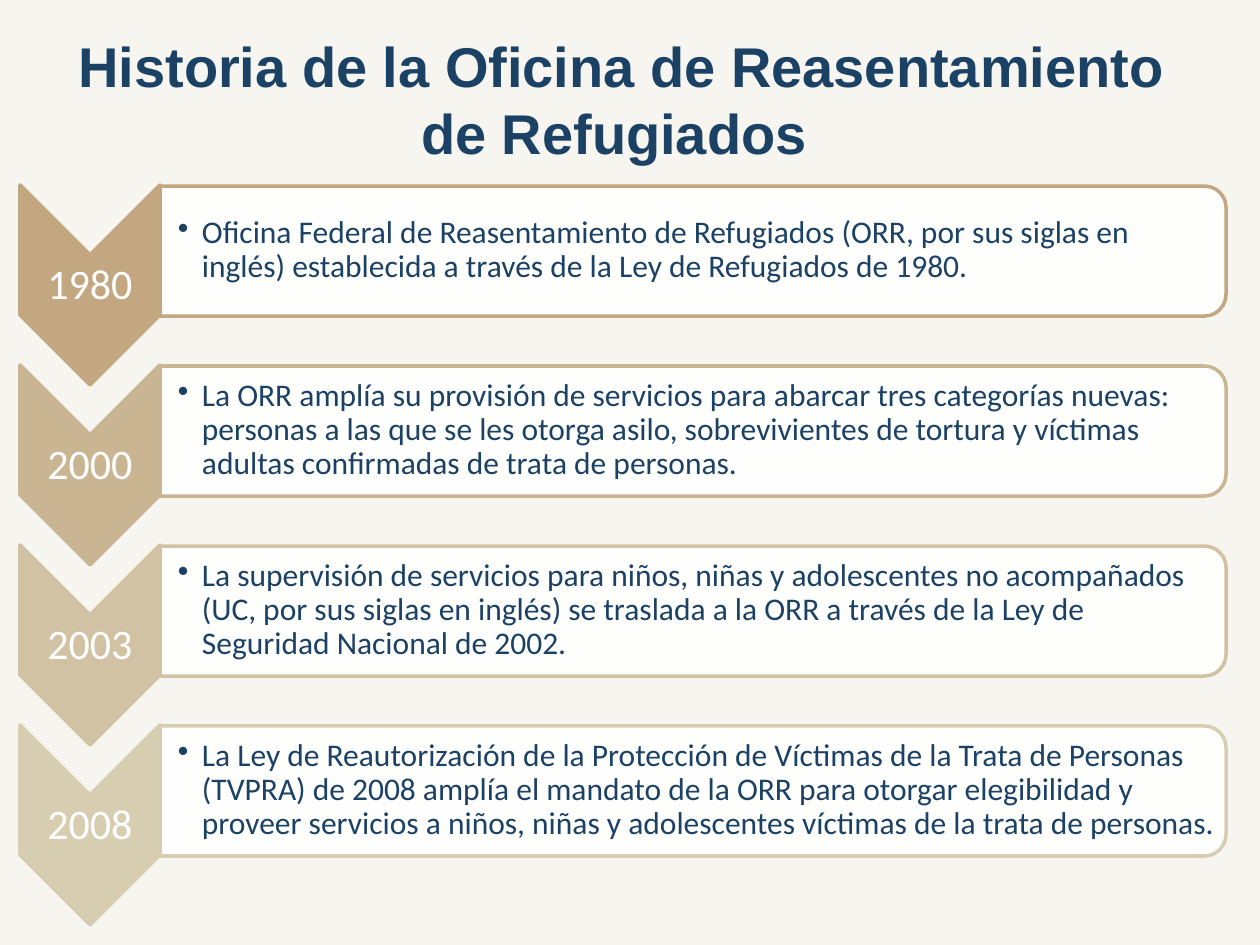
from lxml import etree
from pptx import Presentation
from pptx.dml.color import RGBColor
from pptx.enum.shapes import MSO_SHAPE
from pptx.enum.text import MSO_ANCHOR, PP_ALIGN
from pptx.oxml.ns import qn
from pptx.util import Emu, Pt

CHEVRON = MSO_SHAPE.CHEVRON
ROUNDED_TOP = MSO_SHAPE.ROUND_2_SAME_RECTANGLE
TOP, MIDDLE = MSO_ANCHOR.TOP, MSO_ANCHOR.MIDDLE
LEFT, CENTER = PP_ALIGN.LEFT, PP_ALIGN.CENTER

PX_PER_INCH = 126
NAVY, WHITE, CREAM = "1B4164", "FFFFFF", "F7F5F0"
ROW_STEP = 180

MILESTONES = [
    ("1980", "C3A781",
     "Oficina Federal de Reasentamiento de Refugiados (ORR, por sus siglas en "
     "inglés) establecida a través de la Ley de Refugiados de 1980."),
    ("2000", "C9B592",
     "La ORR amplía su provisión de servicios para abarcar tres categorías nuevas: "
     "personas a las que se les otorga asilo, sobrevivientes de tortura y víctimas "
     "adultas confirmadas de trata de personas."),
    ("2003", "D0C2A2",
     "La supervisión de servicios para niños, niñas y adolescentes no acompañados "
     "(UC, por sus siglas en inglés) se traslada a la ORR a través de la Ley de "
     "Seguridad Nacional de 2002."),
    ("2008", "D7CEB2",
     "La Ley de Reautorización de la Protección de Víctimas de la Trata de Personas "
     "(TVPRA) de 2008 amplía el mandato de la ORR para otorgar elegibilidad y "
     "proveer servicios a niños, niñas y adolescentes víctimas de la trata de personas."),
]


def px(length):
    return Emu(round(length * 914400 / PX_PER_INCH))


def color(hex_text):
    return RGBColor.from_string(hex_text)


def write(frame, text, size, ink, font="Calibri", bold=False, align=LEFT,
          anchor=MIDDLE, insets=(13, 6, 13, 6), spacing=None, hanging=0):
    """Fill a text frame with one paragraph; hanging is the bullet indent."""
    frame.word_wrap = True
    frame.vertical_anchor = anchor
    (frame.margin_left, frame.margin_top,
     frame.margin_right, frame.margin_bottom) = map(px, insets)
    paragraph = frame.paragraphs[0]
    paragraph.alignment = align
    if spacing:
        paragraph.line_spacing = spacing
    if hanging:
        properties = paragraph._p.get_or_add_pPr()
        properties.set("marL", str(px(hanging)))
        properties.set("indent", str(-px(hanging)))
        etree.SubElement(properties, qn("a:buChar")).set("char", "•")
    run = paragraph.add_run()
    run.text = text
    run.font.name = font
    run.font.size = Pt(size)
    run.font.bold = bold
    run.font.color.rgb = color(ink)


class SlideBuilder:
    def __init__(self, slide):
        self.slide = slide
        self.line_width = Pt(2)

    def background(self, fill):
        self.slide.background.fill.solid()
        self.slide.background.fill.fore_color.rgb = color(fill)

    def turned_shape(self, kind, box, fill, line, opacity=100):
        """Add a preset shape turned a quarter clockwise."""
        shape = self.slide.shapes.add_shape(kind, *map(px, box))
        shape.rotation = 90
        shape.shadow.inherit = False
        shape.fill.solid()
        shape.fill.fore_color.rgb = color(fill)
        shape.line.color.rgb = color(line)
        shape.line.width = self.line_width
        if opacity < 100:
            fill_color = shape._element.spPr.find(qn("a:solidFill"))[0]
            etree.SubElement(fill_color, qn("a:alpha")).set("val", str(opacity * 1000))

    def text(self, box, text, **style):
        textbox = self.slide.shapes.add_textbox(*map(px, box))
        write(textbox.text_frame, text, **style)

    def milestone(self, offset, year, tint, event):
        self.turned_shape(CHEVRON, (-10, 215 + offset, 200, 140), tint, tint)
        self.text((20, 256 + offset, 140, 60), year, size=24, ink=WHITE,
                  align=CENTER, insets=(2, 2, 2, 2), spacing=0.9)
        self.turned_shape(ROUNDED_TOP, (628, offset - 282, 130, 1066),
                          WHITE, tint, opacity=90)
        self.text((160, 192 + offset, 1060, 117), event, size=18, ink=NAVY,
                  insets=(18, 1, 1, 1), spacing=0.9, hanging=24)


def main():
    deck = Presentation()
    deck.slide_width, deck.slide_height = px(1260), px(945)
    builder = SlideBuilder(deck.slides.add_slide(deck.slide_layouts[6]))
    builder.background(CREAM)

    # Timeline, one row per year
    for row, (year, tint, event) in enumerate(MILESTONES):
        builder.milestone(row * ROW_STEP, year, tint, event)

    # Title
    builder.text((55, 25, 1134, 120),
                 "Historia de la Oficina de Reasentamiento de Refugiados ",
                 size=32, ink=NAVY, font="Arial", bold=True, align=CENTER, anchor=TOP)

    deck.save("out.pptx")


if __name__ == "__main__":
    main()
